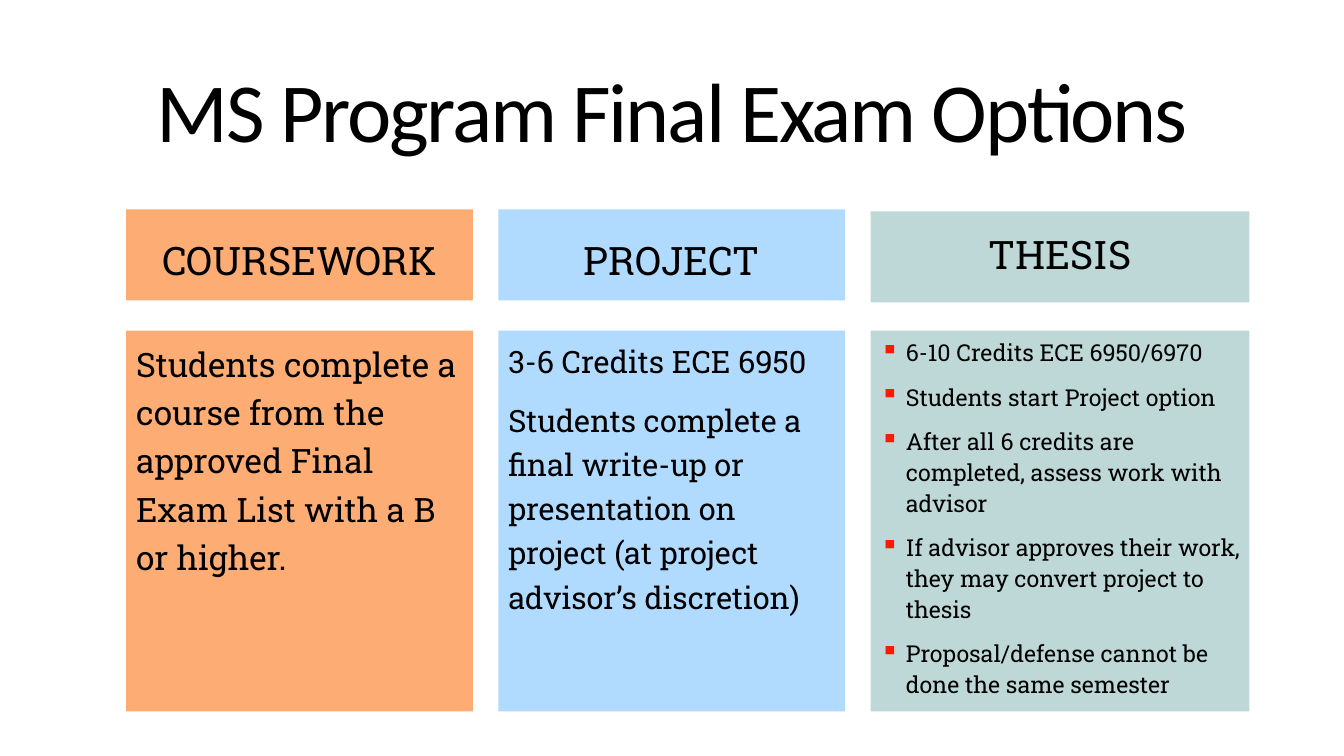
from lxml import etree
from pptx import Presentation
from pptx import util as u
from pptx.dml.color import RGBColor
from pptx.enum import shapes, text
from pptx.oxml.ns import qn

MID, LEFT = text.PP_ALIGN.CENTER, text.PP_ALIGN.LEFT
SLAB = "Roboto Slab"


def paint(color, code):
    """Set a fill or font colour from a hex string."""
    color.rgb = RGBColor.from_string(code)


def bullet(para):
    """Give a paragraph a red square bullet with a hanging indent."""
    props = para._p.get_or_add_pPr()
    props.set("marL", str(u.Cm(0.64)))
    props.set("indent", str(-u.Cm(0.64)))
    tint = etree.SubElement(props, qn("a:buClr"))
    etree.SubElement(tint, qn("a:srgbClr"), val="F81B02")
    etree.SubElement(props, qn("a:buSzPct"), val="110000")
    etree.SubElement(props, qn("a:buChar"), char="▪")


def write(frame, lines, size, lead, align, font=SLAB, gap=10, marks=False):
    """Fill a text frame with evenly styled paragraphs."""
    frame.word_wrap = True
    for i, line in enumerate(lines):
        para = frame.paragraphs[0] if i == 0 else frame.add_paragraph()
        para.text = line
        para.alignment = align
        para.line_spacing = lead
        para.space_before = u.Pt(gap)
        if marks:
            bullet(para)
        para.font.name = font
        para.font.size = u.Pt(size)
        paint(para.font.color, "000000")


def panel(slide, box, fill, anchor):
    """Draw a flat filled rectangle and return its text frame."""
    rect = slide.shapes.add_shape(shapes.MSO_SHAPE.RECTANGLE, *map(u.Cm, box))
    rect.shadow.inherit = False
    rect.fill.solid()
    paint(rect.fill.fore_color, fill)
    rect.line.fill.background()
    rect.text_frame.vertical_anchor = anchor
    return rect.text_frame


def title(slide, box, words):
    """Place the tightly spaced slide title."""
    frame = slide.shapes.add_textbox(*map(u.Cm, box)).text_frame
    write(frame, [words], 60, 0.85, MID, font="Calibri", gap=0)
    frame.paragraphs[0].runs[0]._r.get_or_add_rPr().set("spc", "-150")


def column(slide, box, fill, head, lines, size, lead, drop, marks):
    """Place one exam option as a heading above a body panel."""
    left, top, width, height = box
    frame = panel(slide, (left, top + drop, width, 2.29), fill, text.MSO_ANCHOR.MIDDLE)
    write(frame, [head], 28, 0.9 if marks else 1.2, MID)
    body = (left, top + 3.05, width, height - 3.05)
    frame = panel(slide, body, fill, text.MSO_ANCHOR.TOP)
    write(frame, lines, size, lead, LEFT, marks=marks)


def main():
    """Build and save the slide."""
    deck = Presentation()
    deck.slide_width, deck.slide_height = u.Cm(33.87), u.Cm(19.05)
    slide = deck.slides.add_slide(deck.slide_layouts[6])
    title(slide, (3.18, 1.73, 27.51, 4.11), "MS Program Final Exam Options")
    options = [
        (8.74, "FDAD73", "COURSEWORK", [
            "Students complete a course from the approved Final Exam List "
            "with a B or higher.",
        ], 24, 1.2, 0, False),
        (8.74, "B1DAFF", "PROJECT", [
            "3-6 Credits ECE 6950",
            "Students complete a final write-up or presentation on project "
            "(at project advisor’s discretion)",
        ], 22, 1.2, 0, False),
        (9.55, "BDD8D7", "THESIS", [
            "6-10 Credits ECE 6950/6970",
            "Students start Project option",
            "After all 6 credits are completed, assess work with advisor",
            "If advisor approves their work, they may convert project to thesis",
            "Proposal/defense cannot be done the same semester",
        ], 16.6, 1.1, 0.05, True),
    ]
    for i, (width, *rest) in enumerate(options):
        column(slide, (3.18 + i * 9.38, 5.28, width, 12.65), *rest)
    deck.save("out.pptx")


if __name__ == "__main__":
    main()
